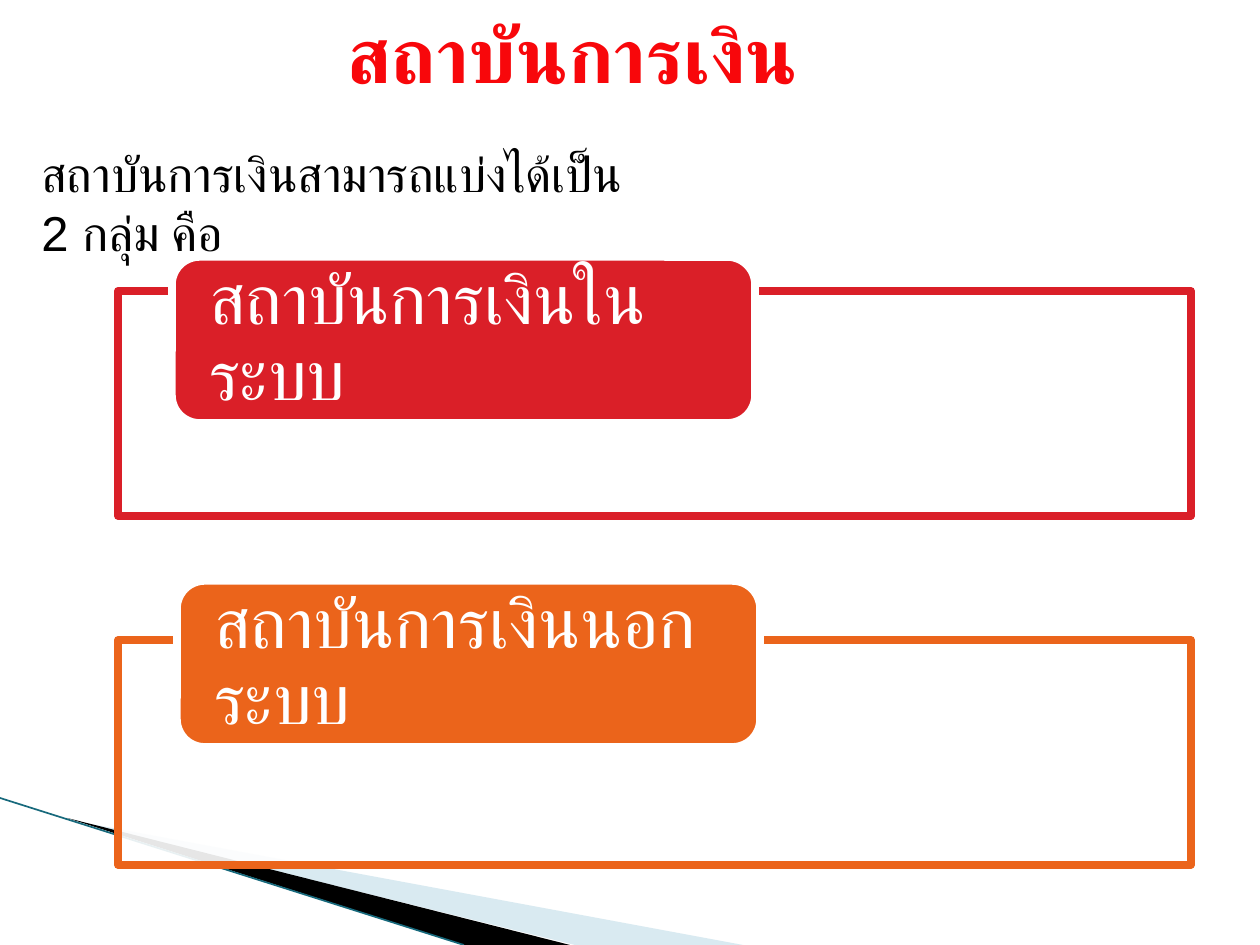
from dataclasses import dataclass

from lxml import etree
from pptx import Presentation
from pptx import util as u
from pptx.dml.color import RGBColor
from pptx.enum import shapes, text
from pptx.oxml import ns

PX = 914400 / 126


@dataclass(frozen=True)
class Theme:
    """Colours, fonts and point sizes."""
    title: str = "F8070B"
    ink: str = "000000"
    paper: str = "FFFFFF"
    red: str = "DA1F28"
    orange: str = "EB641B"
    pale: str = "A0CBDC"
    teal: str = "17697C"
    font: str = "Arial"
    label_font: str = "Noto Sans Mono"
    title_size: int = 44
    body_size: int = 28
    label_size: int = 40
    border: float = 4.33
    hairline: float = 0.95


T = Theme()


def emu(*lengths):
    """Convert px lengths to EMU."""
    return [u.Emu(round(n * PX)) for n in lengths]


def paint(sp, fill, alpha=100, line=None):
    """Set fill, opacity and border of a shape, without shadow."""
    sp.shadow.inherit = False
    sp.fill.solid()
    sp.fill.fore_color.rgb = RGBColor.from_string(fill)
    if alpha < 100:
        clr = sp.fill._xPr.find(".//" + ns.qn("a:srgbClr"))
        etree.SubElement(clr, ns.qn("a:alpha"), val=str(alpha * 1000))
    if line:
        sp.line.color.rgb = RGBColor.from_string(line)
        sp.line.width = u.Pt(T.border)
        etree.SubElement(sp.line._get_or_add_ln(), ns.qn("a:round"))
    else:
        sp.line.fill.background()


def write(sp, words, size, color, font, bold=False):
    """Put one left-aligned wrapped paragraph in a shape and return it."""
    tf = sp.text_frame
    tf.word_wrap = True
    p = tf.paragraphs[0]
    p.text = words
    p.alignment = text.PP_ALIGN.LEFT
    p.font.size = u.Pt(size)
    p.font.bold = bold
    p.font.name = font
    p.font.color.rgb = RGBColor.from_string(color)
    return p


def add_text(s, box, words, size, color, bold=False):
    """Add a text box."""
    sp = s.shapes.add_textbox(*emu(*box))
    write(sp, words, size, color, T.font, bold)


def add_wedge(s, x, y, points, fill, alpha=100):
    """Add a filled polygon with points relative to its corner."""
    fb = s.shapes.build_freeform(0, 0, scale=PX)
    start, *rest = [(x + dx, y + dy) for dx, dy in points]
    fb = s.shapes.build_freeform(*start, scale=PX)
    fb.add_line_segments(rest, close=True)
    paint(fb.convert_to_shape(), fill, alpha)


def add_swoosh(s, x, y):
    """Draw the wedges and the thin line in the lower left corner."""
    add_wedge(s, x, y, [(69, 22), (743, 147), (575, 147)], T.pale, 40)
    add_wedge(s, x, y, [(67, 20), (570, 147), (464, 147)], T.ink)
    ends = emu(x, y, x + 464, y + 147)
    cx = s.shapes.add_connector(shapes.MSO_CONNECTOR.STRAIGHT, *ends)
    cx.line.color.rgb = RGBColor.from_string(T.teal)
    cx.line.width = u.Pt(T.hairline)
    etree.SubElement(cx._element.spPr, ns.qn("a:effectLst"))


def add_group(s, box, label_dx, label_dy, words, color):
    """Draw an outlined panel with a rounded label over its top edge."""
    x, y, w, h = box
    panel = s.shapes.add_shape(shapes.MSO_SHAPE.RECTANGLE, *emu(x, y, w, h))
    paint(panel, T.paper, 90, color)
    label = s.shapes.add_shape(
        shapes.MSO_SHAPE.ROUNDED_RECTANGLE,
        *emu(x + label_dx, y + label_dy, 583, 166))
    paint(label, color, line=T.paper)
    tf = label.text_frame
    tf.margin_left = tf.margin_right = emu(29)[0]
    tf.margin_top = tf.margin_bottom = 0
    tf.vertical_anchor = text.MSO_ANCHOR.MIDDLE
    p = write(label, words, T.label_size, T.paper, T.label_font)
    p.line_spacing = 0.9


def main():
    """Build and save the slide."""
    prs = Presentation()
    prs.slide_width, prs.slide_height = emu(1260, 945)
    s = prs.slides.add_slide(prs.slide_layouts[6])
    add_swoosh(s, 0, 798)
    add_text(s, (335, 0, 507, 144), "สถาบันการเงิน",
             T.title_size, T.title, bold=True)
    add_text(s, (29, 137, 617, 72),
             "สถาบันการเงินสามารถแบ่งได้เป็น 2 กลุ่ม คือ",
             T.body_size, T.ink)
    add_group(s, (118, 291, 1073, 225), 54, -34, "สถาบันการเงินในระบบ", T.red)
    add_group(s, (118, 640, 1073, 225), 59, -59, "สถาบันการเงินนอกระบบ", T.orange)
    prs.save("out.pptx")


if __name__ == "__main__":
    main()
